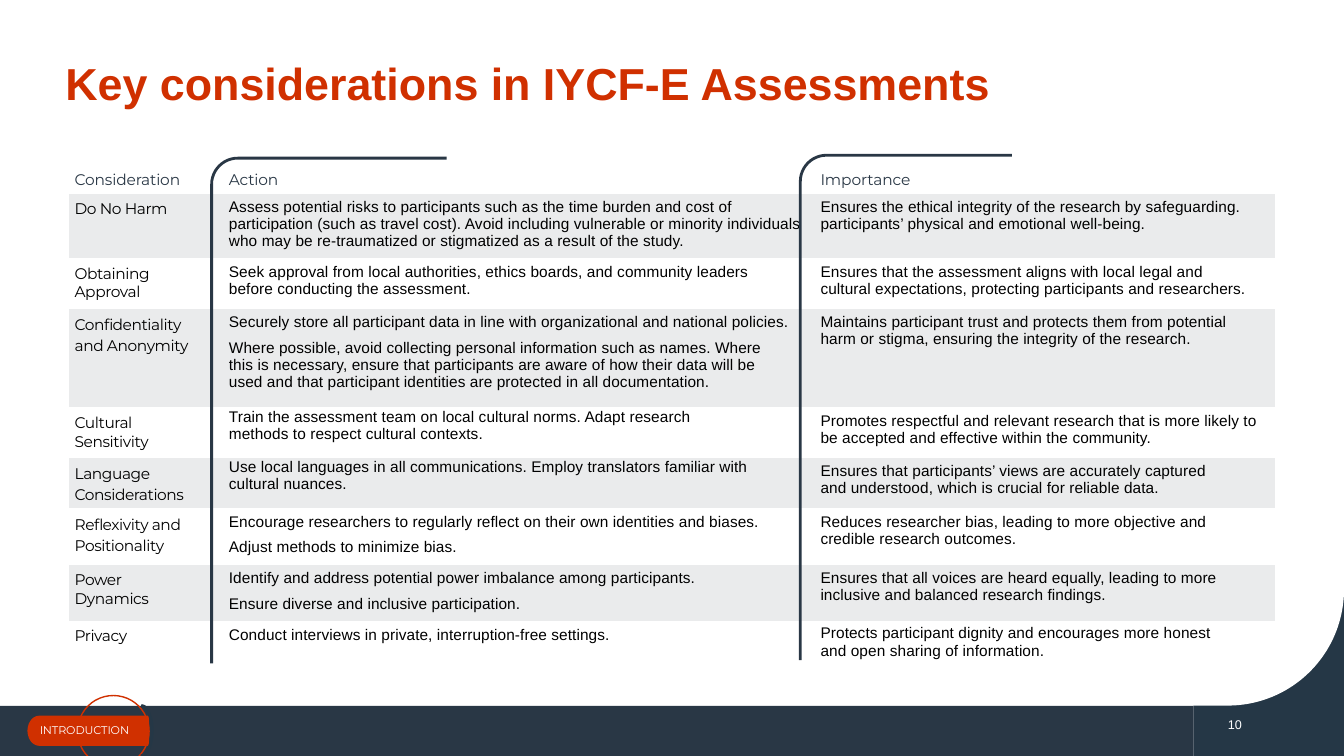
"""Build the slide on key considerations in IYCF-E assessments."""
from math import cos, radians, sin

from pptx import Presentation
from pptx.dml.color import RGBColor
from pptx.enum.shapes import MSO_SHAPE as Preset
from pptx.enum.text import MSO_ANCHOR as Anchor, PP_ALIGN as Align
from pptx.oxml.ns import qn
from pptx.util import Pt

NAVY = RGBColor(0x29, 0x37, 0x45)
DEEP_NAVY = RGBColor(0x25, 0x37, 0x46)
RED = RGBColor(0xD0, 0x30, 0x00)
GRAY = RGBColor(0xEA, 0xEB, 0xEC)
WHITE = RGBColor(0xFF, 0xFF, 0xFF)
BLACK = RGBColor(0, 0, 0)
BODY, LABEL = "Arial", "Montserrat"

TITLE = "Key considerations in IYCF-E Assessments"
SECTION = "INTRODUCTION"
PAGE_NUMBER = "10"
HEADINGS = ["Consideration", "Action", "Importance"]
ROWS = [
    ("Do No Harm",
     "Assess potential risks to participants such as the time burden and cost of participation "
     "(such as travel cost). Avoid including vulnerable or minority individuals who may be "
     "re-traumatized or stigmatized as a result of the study.",
     "Ensures the ethical integrity of the research by safeguarding. participants’ physical and "
     "emotional well-being."),
    ("Obtaining\vApproval",
     "Seek approval from local authorities, ethics boards, and community leaders before "
     "conducting the assessment.",
     "Ensures that the assessment aligns with local legal and cultural expectations, protecting "
     "participants and researchers."),
    ("Confidentiality\vand Anonymity",
     "Securely store all participant data in line with organizational and national policies.\n"
     "Where possible, avoid collecting personal information such as names. Where\v"
     "this is necessary, ensure that participants are aware of how their data will be\v"
     "used and that participant identities are protected in all documentation.",
     "Maintains participant trust and protects them from potential harm or stigma, ensuring the "
     "integrity of the research."),
    ("Cultural\vSensitivity",
     "Train the assessment team on local cultural norms. Adapt research methods to respect "
     "cultural contexts.",
     "Promotes respectful and relevant research that is more likely to be accepted and effective "
     "within the community."),
    ("Language Considerations",
     "Use local languages in all communications. Employ translators familiar with cultural "
     "nuances.",
     "Ensures that participants’ views are accurately captured and understood, which is crucial "
     "for reliable data."),
    ("Reflexivity and Positionality",
     "Encourage researchers to regularly reflect on their own identities and biases.\n"
     "Adjust methods to minimize bias.",
     "Reduces researcher bias, leading to more objective and credible research outcomes."),
    ("Power\vDynamics",
     "Identify and address potential power imbalance among participants.\n"
     "Ensure diverse and inclusive participation.",
     "Ensures that all voices are heard equally, leading to more inclusive and balanced research "
     "findings."),
    ("Privacy",
     "Conduct interviews in private, interruption-free settings.",
     "Protects participant dignity and encourages more honest and open sharing of information."),
]
COLUMN_WIDTHS = [114.5, 422.6, 324.4]
ROW_HEIGHTS = [17.3, 46.1, 36, 70.6, 36, 36, 40.3, 40.3, 33.8]
LOOSE_LABEL_ROWS = {3, 5, 6}
TOP_MARGINS = {(4, 1): 0.7, (5, 1): 0.7, (8, 1): 4.3, (8, 2): 2.9}
RIGHT_MARGINS = {(2, 1): 18, (4, 1): 50, (5, 1): 50, (1, 2): 9, (2, 2): 14, (3, 2): 9,
                 (4, 2): 9, (5, 2): 30, (6, 2): 14, (7, 2): 9, (8, 2): 30}
BRACKETS = [(151.2, 113, 473.8, 319), (571.7, 110.9, 471.6, 722.9)]
CORNER = 18.7


def paint(shape, fill=None, line=None, weight=1):
    shape.shadow.inherit = False
    if fill is None:
        shape.fill.background()
    else:
        shape.fill.solid()
        shape.fill.fore_color.rgb = fill
    if line is None:
        shape.line.fill.background()
    else:
        shape.line.color.rgb = line
        shape.line.width = Pt(weight)


def add_preset(page, preset, bounds, **style):
    paint(page.shapes.add_shape(preset, *map(Pt, bounds)), **style)


def add_outline(page, points, close=False, **style):
    corners = [(Pt(x), Pt(y)) for x, y in points]
    builder = page.shapes.build_freeform(*corners[0])
    builder.add_line_segments(corners[1:], close=close)
    paint(builder.convert_to_shape(), **style)


def arc(x, y, radius_x, radius_y, start, end, steps=12):
    angles = [radians(start + (end - start) * step / steps) for step in range(steps + 1)]
    return [(x + radius_x * cos(angle), y + radius_y * sin(angle)) for angle in angles]


def write(frame, text, font, size, color, spacing=0, margins=(0, 0, 0, 0), bold=False):
    frame.text = text
    frame.margin_left, frame.margin_top, frame.margin_right, frame.margin_bottom = map(Pt, margins)
    for index, para in enumerate(frame.paragraphs):
        if index:
            para.space_before = Pt(6)
        for span in para.runs:
            span.font.name, span.font.size, span.font.bold = font, Pt(size), bold
            span.font.color.rgb = color
            span._r.get_or_add_rPr().set("spc", str(round(spacing * 100)))


def add_text(page, bounds, text, *style, wrap=True, **options):
    frame = page.shapes.add_textbox(*map(Pt, bounds)).text_frame
    write(frame, text, *style, **options)
    frame.word_wrap = wrap
    return frame


def add_footer(page):
    add_preset(page, Preset.RECTANGLE, (852.5, 410.4, 107.5, 129.6), fill=DEEP_NAVY)
    add_preset(page, Preset.RECTANGLE, (0, 504, 852.5, 36), fill=NAVY)
    add_preset(page, Preset.ROUND_2_DIAG_RECTANGLE, (0, 6.5, 960, 497.5), fill=WHITE)
    pill = [(106.6, 511.2), *arc(28.1, 522, 8.5, 10.8, 270, 90), (106.6, 532.8)]
    add_outline(page, pill, close=True, fill=RED)
    number = add_text(page, (868.3, 508.3, 25.9, 18), PAGE_NUMBER, BODY, 9, WHITE,
                      wrap=False, margins=(7.2, 3.6, 7.2, 3.6))
    number.paragraphs[0].alignment = Align.RIGHT
    add_preset(page, Preset.OVAL, (55.4, 496.8, 51.1, 51.1), line=RED)
    add_text(page, (27.4, 516.2, 73.4, 11.5), SECTION, LABEL, 8, WHITE,
             spacing=-0.1, margins=(1, 0.7, 0, 0))
    add_outline(page, arc(100.8, 522, 7.9, 18, 90, -90), line=DEEP_NAVY, weight=2.25)


def add_considerations(page):
    grid = [HEADINGS, *ROWS]
    bounds = (49, 121, sum(COLUMN_WIDTHS), sum(ROW_HEIGHTS))
    table = page.shapes.add_table(len(grid), len(HEADINGS), *map(Pt, bounds)).table
    table.first_row = table.horz_banding = False
    style = table._tbl.tblPr.find(qn("a:tableStyleId"))
    style.text = "{2D5ABB26-0587-4C30-8999-92F81FD0307C}"
    for column, width in zip(table.columns, COLUMN_WIDTHS):
        column.width = Pt(width)
    for row, (texts, height) in enumerate(zip(grid, ROW_HEIGHTS)):
        table.rows[row].height = Pt(height)
        for column, text in enumerate(texts):
            cell = table.cell(row, column)
            loose = column == 0 and row in LOOSE_LABEL_ROWS
            if row == 0:
                font, color, spacing, top = LABEL, NAVY, -0.1, 0.7
            elif column == 0:
                font, color, spacing, top = LABEL, BLACK, -0.3, 3.6 if loose else 4.3
            else:
                font, color, spacing, top = BODY, BLACK, 0.05, 3.6
            margins = (0 if column else 4.3, TOP_MARGINS.get((row, column), top),
                       RIGHT_MARGINS.get((row, column), 0), 0)
            write(cell.text_frame, text, font, 11, color, spacing)
            cell.margin_left, cell.margin_top, cell.margin_right, cell.margin_bottom = map(
                Pt, margins)
            if loose:
                cell.text_frame.paragraphs[0].line_spacing = 1.11
            if row % 2:
                cell.fill.solid()
                cell.fill.fore_color.rgb = GRAY
            else:
                cell.fill.background()


def main():
    deck = Presentation()
    deck.slide_width, deck.slide_height = Pt(960), Pt(540)
    page = deck.slides.add_slide(deck.slide_layouts[6])
    add_footer(page)
    title = add_text(page, (39.6, 28.8, 828, 65.5), TITLE, BODY, 32, RED,
                     margins=(7.2, 3.6, 7.2, 3.6), bold=True)
    title.vertical_anchor = Anchor.MIDDLE
    title.paragraphs[0].line_spacing = 0.9
    add_considerations(page)
    for left, top, bottom, right in BRACKETS:
        corner = arc(left + CORNER, top + CORNER, CORNER, CORNER, 180, 270)
        add_outline(page, [(left, bottom), *corner, (right, top)], line=NAVY, weight=2)
    deck.save("out.pptx")


if __name__ == "__main__":
    main()
